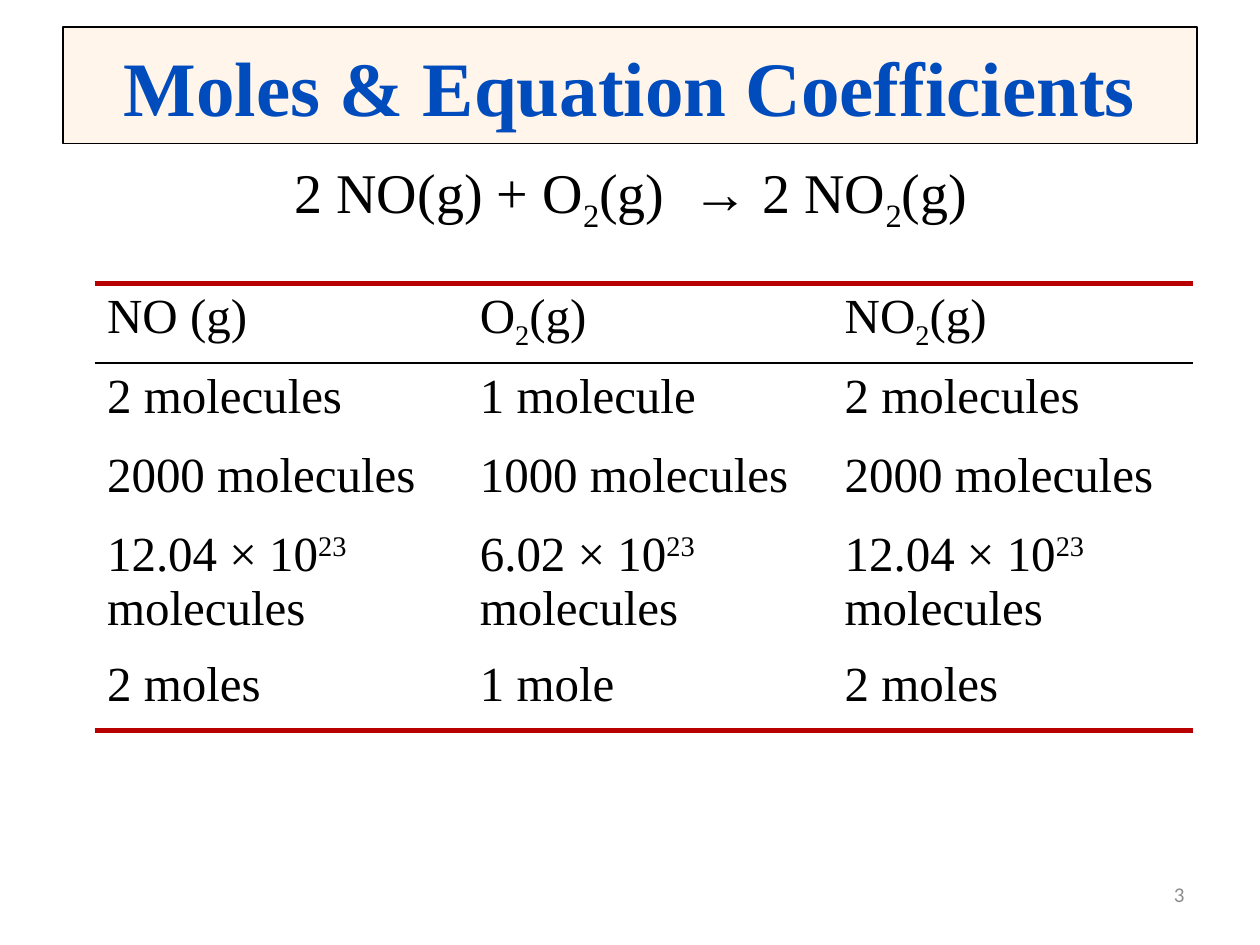
from dataclasses import dataclass

from lxml.etree import SubElement
from pptx import Presentation
from pptx.dml.color import RGBColor
from pptx.enum.shapes import MSO_SHAPE as Shape
from pptx.enum.text import MSO_ANCHOR as Anchor, PP_ALIGN as Align
from pptx.oxml.ns import qn
from pptx.util import Pt


@dataclass(frozen=True)
class Theme:
    serif: str = "Times New Roman"
    sans: str = "Calibri"
    title: str = "004CBC"
    banner: str = "FFCC99"
    banner_alpha: int = 19
    ink: str = "000000"
    rule: str = "B80000"
    muted: str = "8C8C8C"
    title_size: int = 44
    equation_size: int = 32
    table_size: int = 28
    number_size: int = 12


THEME = Theme()
BASELINES = {"_": "-25000", "^": "30000"}
EQUATION = "2 NO(g) + O|_2|(g)  → 2 NO|_2|(g)"
AMOUNTS = [
    ["NO (g)", "O|_2|(g)", "NO|_2|(g)"],
    ["2 molecules", "1 molecule", "2 molecules"],
    ["2000 molecules", "1000 molecules", "2000 molecules"],
    ["12.04 × 10|^23| molecules", "6.02 × 10|^23| molecules", "12.04 × 10|^23| molecules"],
    ["2 moles", "1 mole", "2 moles"],
]


def write(frame, text, size, color=THEME.ink, font=THEME.serif, align=Align.LEFT, bold=False):
    """Fill a text frame; |_x| is a subscript and |^x| a superscript."""
    frame.word_wrap = True
    paragraph = frame.paragraphs[0]
    paragraph.alignment = align
    paragraph.font.name = font
    paragraph.font.size = Pt(size)
    paragraph.font.bold = bold
    paragraph.font.color.rgb = RGBColor.from_string(color)
    for part in text.split("|"):
        run = paragraph.add_run()
        run.text = part.lstrip("_^")
        if part[0] in BASELINES:
            run.font._element.set("baseline", BASELINES[part[0]])
    return paragraph


def add_title(slide, box, text):
    banner = slide.shapes.add_shape(Shape.RECTANGLE, *box)
    banner.shadow.inherit = False
    banner.fill.solid()
    banner.fill.fore_color.rgb = RGBColor.from_string(THEME.banner)
    color = banner._element.spPr.find(qn("a:solidFill"))[0]
    SubElement(color, qn("a:alpha")).set("val", str(THEME.banner_alpha * 1000))
    banner.line.color.rgb = RGBColor.from_string(THEME.ink)
    banner.line.width = Pt(1)
    banner.text_frame.vertical_anchor = Anchor.MIDDLE
    write(banner.text_frame, text, THEME.title_size, THEME.title, align=Align.CENTER, bold=True)


def add_equation(slide, box, text):
    frame = slide.shapes.add_textbox(*box).text_frame
    paragraph = write(frame, text, THEME.equation_size, align=Align.CENTER)
    paragraph.line_spacing = 0.8


def set_borders(cell, top, bottom):
    """Draw top and bottom as (color, width) pairs, and hide every other side."""
    properties = cell._tc.get_or_add_tcPr()
    sides = {"a:lnL": None, "a:lnR": None, "a:lnT": top, "a:lnB": bottom}
    for position, (tag, rule) in enumerate(sides.items()):
        line = SubElement(properties, qn(tag))
        properties.insert(position, line)
        if rule is None:
            SubElement(line, qn("a:noFill"))
            continue
        color, width = rule
        line.set("w", str(Pt(width)))
        fill = SubElement(line, qn("a:solidFill"))
        SubElement(fill, qn("a:srgbClr")).set("val", color)


def add_amounts_table(slide, box, rows, column_widths):
    table = slide.shapes.add_table(len(rows), len(rows[0]), *box).table
    table.first_row = table.horz_banding = False
    for column, width in zip(table.columns, column_widths):
        column.width = Pt(width)
    outer, inner = (THEME.rule, 3), (THEME.ink, 1.5)
    edges = [outer, inner] + [None] * (len(rows) - 2) + [outer]
    for r, texts in enumerate(rows):
        for c, text in enumerate(texts):
            cell = table.cell(r, c)
            cell.fill.background()
            set_borders(cell, edges[r], edges[r + 1])
            write(cell.text_frame, text, THEME.table_size)


def add_slide_number(slide, box, number):
    frame = slide.shapes.add_textbox(*box).text_frame
    frame.vertical_anchor = Anchor.MIDDLE
    write(frame, str(number), THEME.number_size, THEME.muted, THEME.sans, Align.RIGHT)


def main():
    presentation = Presentation()
    presentation.slide_width, presentation.slide_height = Pt(720), Pt(540)
    slide = presentation.slides.add_slide(presentation.slide_layouts[6])
    add_slide_number(slide, (Pt(516), Pt(492), Pt(168), Pt(37.5)), 3)
    add_title(slide, (Pt(36), Pt(15.5), Pt(648), Pt(66.5)), "Moles & Equation Coefficients")
    add_equation(slide, (Pt(15), Pt(90.5), Pt(691), Pt(47.5)), EQUATION)
    add_amounts_table(slide, (Pt(54), Pt(162), Pt(628), Pt(226)), AMOUNTS, (213, 208.5, 206.5))
    presentation.save("out.pptx")


if __name__ == "__main__":
    main()
